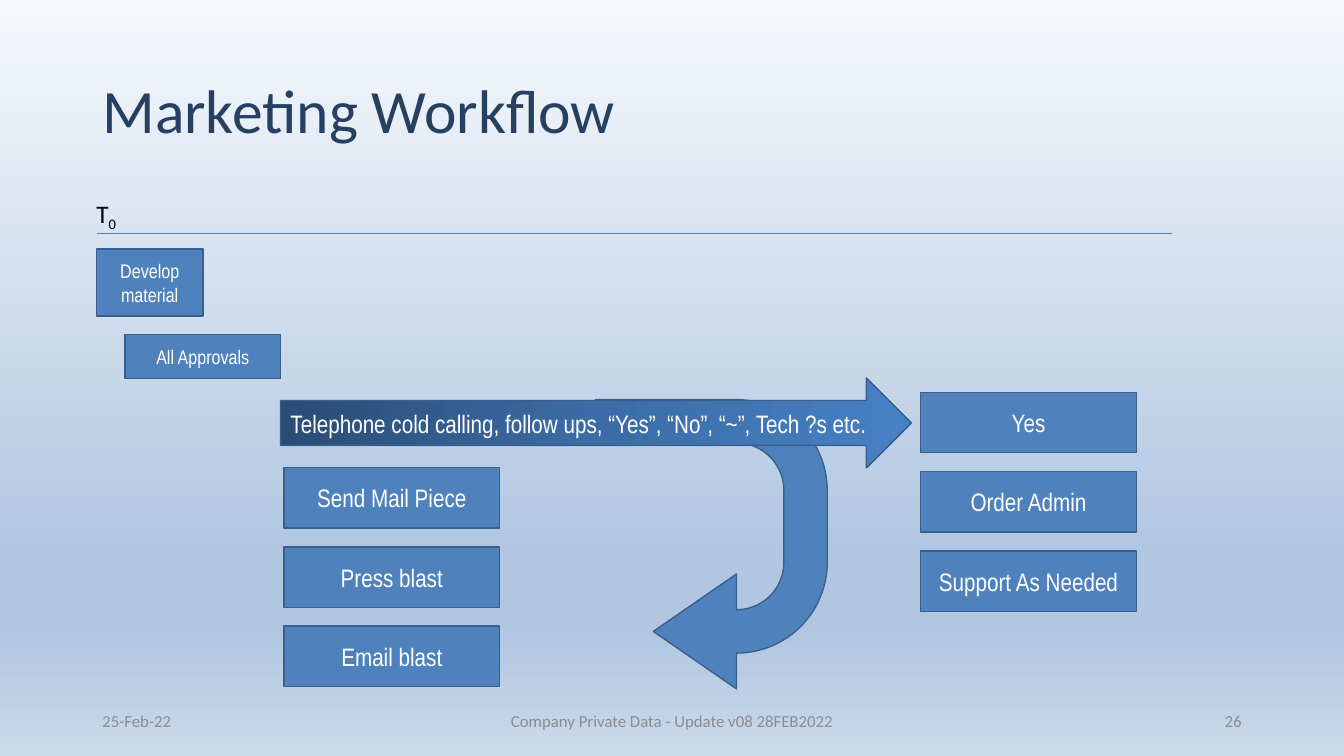
from dataclasses import dataclass

from lxml.etree import SubElement
from pptx import Presentation
from pptx.dml.color import RGBColor
from pptx.enum.shapes import MSO_CONNECTOR, MSO_SHAPE
from pptx.enum.text import MSO_ANCHOR, PP_ALIGN
from pptx.oxml.ns import qn
from pptx.util import Inches, Pt

COLS, ROWS = 160, 90
WIDTH, HEIGHT = Inches(13.33), Inches(7.5)


@dataclass(frozen=True)
class Theme:
    """Colours, fonts and type sizes of the slide."""
    fill: str = "4F81BD"
    outline: str = "3A5F8C"
    title: str = "254061"
    footer: str = "8C8C8C"
    light: str = "FFFFFF"
    dark: str = "000000"
    sky: tuple = ((0, "F6F9FC"), (74, "B0C6E1"), (83, "B0C6E1"), (100, "CAD9EB"))
    calls: tuple = ((0, "2A4C75"), (50, "3C6CA6"), (100, "4780C5"))
    heading_font: str = "Calibri"
    box_font: str = "Arial Narrow"
    title_size: int = 44
    body_size: int = 18
    small_size: int = 14
    footer_size: int = 12


THEME = Theme()


def place(x, y, w, h):
    """Turn grid columns and rows into slide lengths."""
    return (round(WIDTH * x / COLS), round(HEIGHT * y / ROWS),
            round(WIDTH * w / COLS), round(HEIGHT * h / ROWS))


def write(tf, text, size=THEME.body_size, font=THEME.box_font, color=THEME.light,
          align=PP_ALIGN.LEFT, anchor=MSO_ANCHOR.MIDDLE, wrap=True, spacing=None, sub=""):
    """Fill a text frame with one formatted paragraph and an optional subscript."""
    tf.word_wrap = wrap
    tf.vertical_anchor = anchor
    p = tf.paragraphs[0]
    p.alignment = align
    p.line_spacing = spacing
    for part, baseline in ((text, 0), (sub, -25000)):
        if part:
            r = p.add_run()
            r.text = part
            r.font.size = Pt(size)
            r.font.name = font
            r.font.color.rgb = RGBColor.from_string(color)
            if baseline:
                r._r.get_or_add_rPr().set("baseline", str(baseline))


def gradient(fill, element, stops, angle):
    """Apply a linear gradient with any number of stops, angle clockwise."""
    fill.gradient()
    fill.gradient_angle = -angle % 360
    stop_list = element.xpath(".//a:gsLst")[0]
    for stop in list(stop_list):
        stop_list.remove(stop)
    for position, color in stops:
        stop = SubElement(stop_list, qn("a:gs"), pos=str(position * 1000))
        SubElement(stop, qn("a:srgbClr"), val=color)


def label(s, at, text, **style):
    """Add a plain text box."""
    tf = s.shapes.add_textbox(*place(*at)).text_frame
    write(tf, text, **{"font": THEME.heading_font, **style})


def block(s, kind, at, text="", **style):
    """Add an outlined shape in the theme blue."""
    sp = s.shapes.add_shape(kind, *place(*at))
    sp.shadow.inherit = False
    sp.fill.solid()
    sp.fill.fore_color.rgb = RGBColor.from_string(THEME.fill)
    sp.line.color.rgb = RGBColor.from_string(THEME.outline)
    sp.line.width = Pt(1)
    if text:
        write(sp.text_frame, text, **{"align": PP_ALIGN.CENTER, **style})
    return sp


def stack(s, x, y, names):
    """Add a column of equal, evenly spaced task boxes."""
    for i, name in enumerate(names):
        block(s, MSO_SHAPE.RECTANGLE, (x, y + i * 9.45, 25.7, 7.2), name)


def timeline(s, x, y, length):
    """Add the thin horizontal time axis."""
    left, top, width, _ = place(x, y, length, 0)
    cx = s.shapes.add_connector(MSO_CONNECTOR.STRAIGHT, left, top, left + width, top)
    cx.line.color.rgb = RGBColor.from_string(THEME.fill)
    cx.line.width = Pt(0.5)
    SubElement(cx.element.spPr, qn("a:effectLst"))


def footer(s, x, width, text, align):
    """Add one footer entry."""
    label(s, (x, 83.4, width, 4.8), text, size=THEME.footer_size,
          color=THEME.footer, align=align)


def main():
    """Build and save the workflow slide."""
    prs = Presentation()
    prs.slide_width, prs.slide_height = WIDTH, HEIGHT
    s = prs.slides.add_slide(prs.slide_layouts[6])
    gradient(s.background.fill, s.element, THEME.sky, 90)

    loop = block(s, MSO_SHAPE.U_TURN_ARROW, (67.45, 51, 34.45, 27.6))
    loop.rotation = 90
    for i, value in enumerate((0.187, 0.248, 0.359, 0.438, 0.75)):
        loop.adjustments[i] = value

    label(s, (11, 4.8, 138, 17.4), "Marketing Workflow", size=THEME.title_size,
          color=THEME.title, spacing=0.9)
    timeline(s, 11.5, 27.8, 128)
    label(s, (10.3, 23, 5.3, 4.8), "T", sub="0", color=THEME.dark,
          anchor=MSO_ANCHOR.TOP, wrap=False)

    block(s, MSO_SHAPE.RECTANGLE, (11.5, 29.65, 12.65, 7.95), "Develop material",
          size=THEME.small_size)
    block(s, MSO_SHAPE.RECTANGLE, (14.9, 39.8, 18.5, 5.3), "All Approvals",
          size=THEME.small_size)
    calls = block(s, MSO_SHAPE.RIGHT_ARROW, (33.4, 45, 75.1, 10.7),
                  "Telephone cold calling, follow ups, “Yes”, “No”, “~”, Tech ?s etc.",
                  align=PP_ALIGN.LEFT)
    gradient(calls.fill, calls.element, THEME.calls, 0)
    stack(s, 33.8, 55.65, ("Send Mail Piece", "Press blast", "Email blast"))
    stack(s, 109.6, 46.7, ("Yes", "Order Admin", "Support As Needed"))

    footer(s, 11, 36, "25-Feb-22", PP_ALIGN.LEFT)
    footer(s, 53, 54, "Company Private Data - Update v08 28FEB2022", PP_ALIGN.CENTER)
    footer(s, 113, 36, "26", PP_ALIGN.RIGHT)
    prs.save("out.pptx")


if __name__ == "__main__":
    main()
